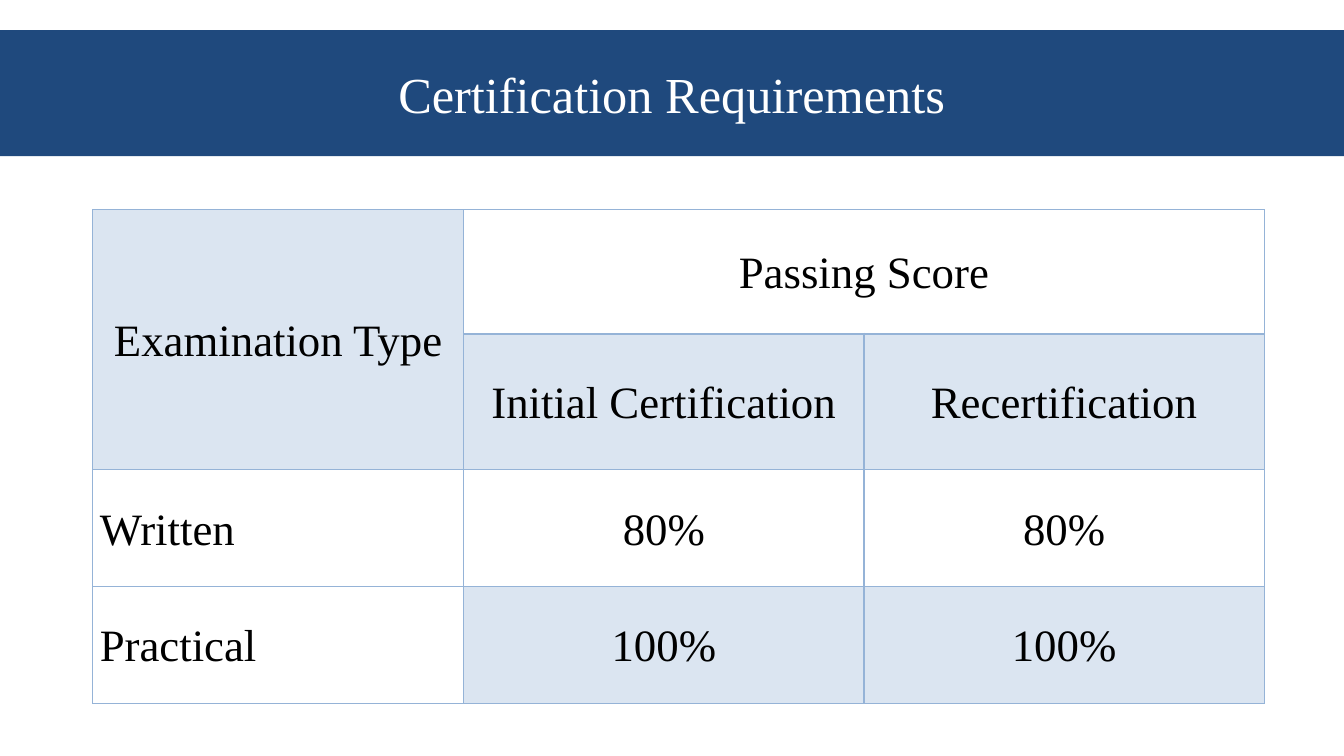
from dataclasses import dataclass

from lxml.etree import SubElement
from pptx import Presentation
from pptx.dml.color import RGBColor
from pptx.enum.shapes import MSO_SHAPE
from pptx.enum.text import MSO_ANCHOR, PP_ALIGN
from pptx.oxml.ns import qn
from pptx.util import Inches, Pt

TITLE = "Certification Requirements"
ROWS = [
    ["Examination Type", "Passing Score", ""],
    ["", "Initial Certification", "Recertification"],
    ["Written", "80%", "80%"],
    ["Practical", "100%", "100%"],
]
MERGES = [((0, 0), (1, 0)), ((0, 1), (0, 2))]
SHADED = {(0, 0), (1, 0), (1, 1), (1, 2), (3, 1), (3, 2)}
COLUMN_WIDTHS = [3.68, 3.97, 3.97]
ROW_HEIGHTS = [1.23, 1.35, 1.16, 1.16]
HEADER_ROWS = 2


@dataclass(frozen=True)
class Theme:
    font: str = "Times New Roman"
    banner: str = "1F497D"
    shade: str = "DBE5F1"
    border: str = "95B3D7"
    light: str = "FFFFFF"
    dark: str = "000000"
    title_size: float = 36
    table_size: float = 32
    thin: float = 1
    thick: float = 1.5


THEME = Theme()


def write(frame, text, size, color, align):
    para = frame.paragraphs[0]
    para.alignment = align
    span = para.add_run()
    span.text = text
    span.font.name = THEME.font
    span.font.size = Pt(size)
    span.font.color.rgb = RGBColor.from_string(color)
    return para


def add_banner(page, width):
    banner = page.shapes.add_shape(
        MSO_SHAPE.RECTANGLE, 0, Inches(0.3), width, Inches(1.25)
    )
    banner.shadow.inherit = False
    banner.fill.solid()
    banner.fill.fore_color.rgb = RGBColor.from_string(THEME.banner)
    banner.line.fill.background()
    banner.text_frame.word_wrap = True
    banner.text_frame.vertical_anchor = MSO_ANCHOR.MIDDLE
    write(banner.text_frame, TITLE, THEME.title_size, THEME.light, PP_ALIGN.CENTER)


def set_borders(cell, row, column):
    properties = cell._tc.get_or_add_tcPr()
    under_score = column > 0
    widths = {
        "a:lnL": THEME.thin,
        "a:lnR": THEME.thin,
        "a:lnT": THEME.thick if under_score and row == 1 else THEME.thin,
        "a:lnB": THEME.thick if under_score and row == 0 else THEME.thin,
    }
    for index, (side, width) in enumerate(widths.items()):
        line = SubElement(properties, qn(side), w=str(Pt(width)))
        fill = SubElement(line, qn("a:solidFill"))
        SubElement(fill, qn("a:srgbClr"), val=THEME.border)
        properties.insert(index, line)


def style_cell(cell, row, column):
    cell.margin_left = cell.margin_right = Inches(0.07)
    cell.margin_top = cell.margin_bottom = 0
    cell.vertical_anchor = MSO_ANCHOR.MIDDLE
    if (row, column) in SHADED:
        cell.fill.solid()
        cell.fill.fore_color.rgb = RGBColor.from_string(THEME.shade)
    else:
        cell.fill.background()
    set_borders(cell, row, column)


def add_scores(page):
    table = page.shapes.add_table(
        len(ROWS), len(COLUMN_WIDTHS), Inches(0.92), Inches(2.08),
        Inches(sum(COLUMN_WIDTHS)), Inches(sum(ROW_HEIGHTS)),
    ).table
    table.first_row = table.horz_banding = False
    for column, width in zip(table.columns, COLUMN_WIDTHS):
        column.width = Inches(width)
    for row, height in zip(table.rows, ROW_HEIGHTS):
        row.height = Inches(height)
    for start, end in MERGES:
        table.cell(*start).merge(table.cell(*end))
    for row, texts in enumerate(ROWS):
        for column, text in enumerate(texts):
            cell = table.cell(row, column)
            style_cell(cell, row, column)
            if text:
                is_label = column == 0 and row >= HEADER_ROWS
                align = PP_ALIGN.LEFT if is_label else PP_ALIGN.CENTER
                para = write(
                    cell.text_frame, text, THEME.table_size, THEME.dark, align
                )
                para.line_spacing = 1.07


def main():
    deck = Presentation()
    deck.slide_width = Inches(13.33)
    deck.slide_height = Inches(7.5)
    page = deck.slides.add_slide(deck.slide_layouts[6])
    add_banner(page, deck.slide_width)
    add_scores(page)
    deck.save("out.pptx")


if __name__ == "__main__":
    main()
